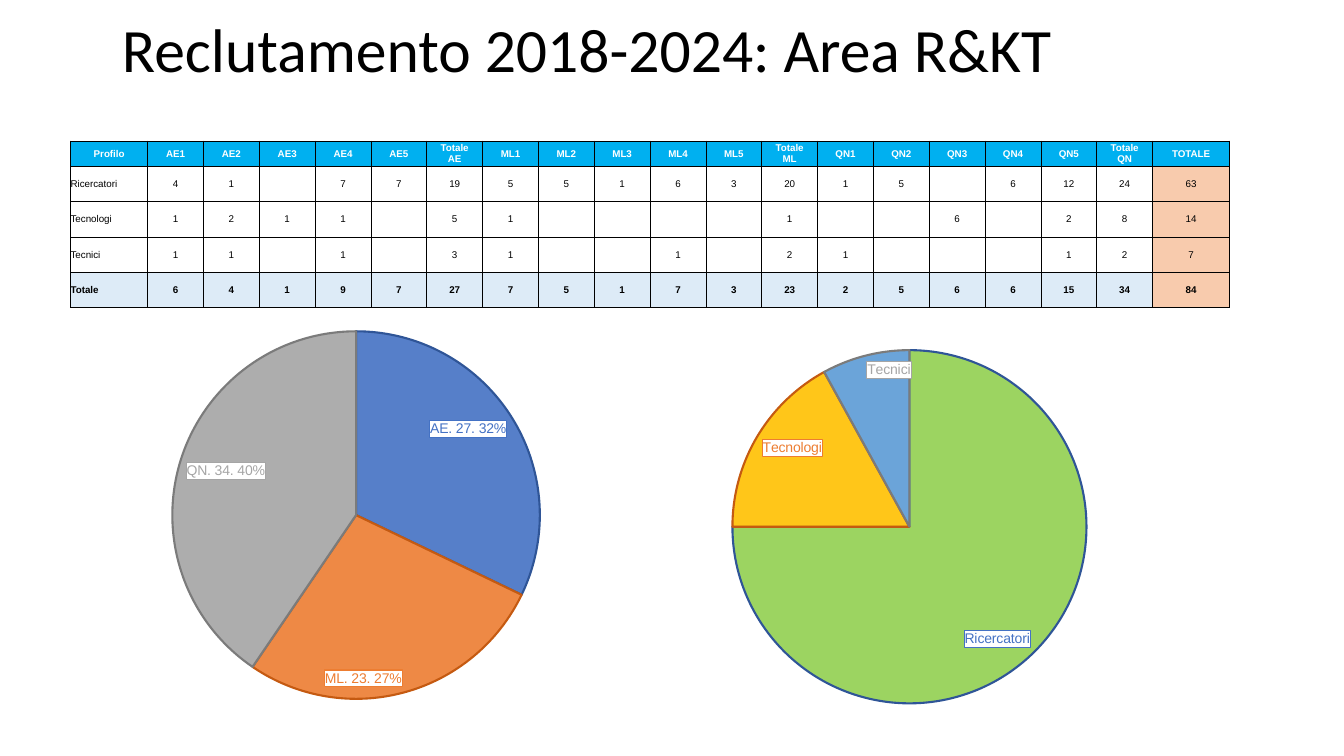
from lxml.etree import SubElement
from pptx import Presentation
from pptx.chart.data import CategoryChartData
from pptx.dml.color import RGBColor
from pptx.enum.chart import XL_CHART_TYPE, XL_LABEL_POSITION
from pptx.enum.text import MSO_ANCHOR, PP_ALIGN
from pptx.oxml import parse_xml
from pptx.oxml.ns import nsdecls, qn
from pptx.util import Cm, Pt

HUES = {
    "black": "000000", "white": "FFFFFF", "head": "00B0F0",
    "sum": "DDEBF7", "total": "F8CBAD",
    "blue": "4472C4", "orange": "ED7D31", "gray": "A5A5A5",
    "navy": "2F5597", "rust": "C55A11", "slate": "7B7B7B",
    "green": "92D050", "gold": "FFC000", "sky": "5B9BD5",
}
INKS = ["blue", "orange", "gray"]
EDGES = ["navy", "rust", "slate"]

GROUPS = ["AE", "ML", "QN"]
HEADS = ["Profilo"]
for group in GROUPS:
    HEADS += [f"{group}{n}" for n in range(1, 6)] + [f"Totale\v{group}"]
HEADS.append("TOTALE")

ROWS = [HEADS] + [line.split(",") for line in (
    "Ricercatori,4,1,,7,7,19,5,5,1,6,3,20,1,5,,6,12,24,63",
    "Tecnologi,1,2,1,1,,5,1,,,,,1,,,6,,2,8,14",
    "Tecnici,1,1,,1,,3,1,,,1,,2,1,,,,1,2,7",
    "Totale,6,4,1,9,7,27,7,5,1,7,3,23,2,5,6,6,15,34,84",
)]


def tint(name):
    return RGBColor.from_string(HUES[name])


def apply(item, form):
    for key, value in form.items():
        setattr(item, key, value)


def style(font, size, name, hue, bold=False):
    apply(font, {"size": Pt(size), "name": name, "bold": bold})
    font.color.rgb = tint(hue)


def add_title(slide, box, text):
    title = slide.shapes.title
    apply(title, dict(zip(("left", "top", "width", "height"), box)))
    frame = title.text_frame
    apply(frame, {"text": text, "word_wrap": True,
                  "vertical_anchor": MSO_ANCHOR.MIDDLE})
    line = frame.paragraphs[0]
    apply(line, {"alignment": PP_ALIGN.LEFT, "line_spacing": 0.9})
    style(line.runs[0].font, 44, "Calibri", "black")


def add_edges(cell):
    props = cell._tc.get_or_add_tcPr()
    for spot, side in enumerate("LRTB"):
        props.insert(spot, parse_xml(
            f'<a:ln{side} {nsdecls("a")} w="6350"><a:solidFill>'
            f'<a:srgbClr val="{HUES["black"]}"/></a:solidFill></a:ln{side}>'))


def fill_cell(cell, text, row, col):
    top, foot = row == 0, row == len(ROWS) - 1
    last = col == len(HEADS) - 1
    hue = ("head" if top else "total" if last
           else "sum" if foot else "white")
    apply(cell, {"text": text, "vertical_anchor": MSO_ANCHOR.MIDDLE,
                 "margin_left": 0, "margin_right": 0,
                 "margin_top": 0, "margin_bottom": 0})
    cell.fill.solid()
    cell.fill.fore_color.rgb = tint(hue)
    line = cell.text_frame.paragraphs[0]
    line.alignment = PP_ALIGN.CENTER if top or col else PP_ALIGN.LEFT
    for run in line.runs:
        style(run.font, 7, "Arial", "white" if top else "black", top or foot)
    add_edges(cell)


def add_grid(slide, box):
    left, top, width, height = box
    count = len(HEADS)
    grid = slide.shapes.add_table(len(ROWS), count, *box).table
    apply(grid, {"first_row": False, "horz_banding": False})
    side, first = Cm(1.94), Cm(0.64)
    for n, col in enumerate(grid.columns):
        ends = n in (0, count - 1)
        col.width = side if ends else (width - 2 * side) // (count - 2)
    for n, row in enumerate(grid.rows):
        row.height = (height - first) // (len(ROWS) - 1) if n else first
    for r, row in enumerate(ROWS):
        for c, text in enumerate(row):
            fill_cell(grid.cell(r, c), text, r, c)


def set_plot(chart, plot):
    area = chart._chartSpace.chart.plotArea
    for old in area.findall(qn("c:layout")):
        area.remove(old)
    spots = "".join(f'<c:{key} val="{value}"/>'
                    for key, value in zip("xywh", plot))
    area.insert(0, parse_xml(
        f'<c:layout {nsdecls("c")}><c:manualLayout>'
        '<c:layoutTarget val="inner"/><c:xMode val="edge"/>'
        f'<c:yMode val="edge"/>{spots}</c:manualLayout></c:layout>'))


def set_label(point, ink, shows):
    label = point.data_label
    style(label.font, 10, "Arial", ink)
    label.position = XL_LABEL_POSITION.INSIDE_END
    node = label._get_or_add_dLbl()
    for key in ("Val", "CatName", "Percent"):
        node.find(qn(f"c:show{key}")).set("val", str(int(key in shows)))
    node.find(qn("c:txPr")).addprevious(parse_xml(
        f'<c:spPr {nsdecls("c", "a")}><a:solidFill>'
        f'<a:srgbClr val="{HUES["white"]}"/></a:solidFill>'
        f'<a:ln w="9525"><a:solidFill><a:srgbClr val="{HUES[ink]}"/>'
        '</a:solidFill></a:ln></c:spPr>'))
    SubElement(node, qn("c:separator")).text = ". "


def add_pie(slide, box, plot, cats, values, fills, shows):
    data = CategoryChartData()
    data.categories = cats
    data.add_series("Series 1", values)
    chart = slide.shapes.add_chart(XL_CHART_TYPE.PIE, *box, data).chart
    apply(chart, {"has_legend": False, "has_title": False})
    style(chart.font, 10, "Arial", "black")
    chart.plots[0].vary_by_categories = True
    set_plot(chart, plot)
    series = chart.plots[0].series[0]
    for n, (fill, edge, ink) in enumerate(zip(fills, EDGES, INKS)):
        point = series.points[n]
        form = point.format
        form.fill.solid()
        form.fill.fore_color.rgb = tint(fill)
        form.line.color.rgb = tint(edge)
        form.line.width = Pt(1.5)
        set_label(point, ink, shows)
    for hue in series._element.xpath("c:dPt/c:spPr/a:solidFill/a:srgbClr"):
        SubElement(hue, qn("a:alpha")).set("val", "90000")


def main():
    deck = Presentation()
    apply(deck, {"slide_width": Cm(33.87), "slide_height": Cm(19.05)})
    slide = deck.slides.add_slide(deck.slide_layouts[5])
    add_title(slide, (Cm(2.82), Cm(-0.51), Cm(29.21), Cm(3.68)),
              "Reclutamento 2018-2024: Area R&KT")
    add_grid(slide, (Cm(1.78), Cm(3.55), Cm(29.21), Cm(4.2)))
    add_pie(slide, (Cm(0.91), Cm(8.05), Cm(16.13), Cm(9.96)),
            (0.21, 0.03, 0.58, 0.93), GROUPS, (27, 23, 34),
            INKS, ("Val", "CatName", "Percent"))
    add_pie(slide, (Cm(15.85), Cm(8.05), Cm(13.34), Cm(9.7)),
            (0.06, 0.08, 0.94, 0.92), [row[0] for row in ROWS[1:4]],
            (75, 17, 8), ("green", "gold", "sky"), ("CatName",))
    deck.save("out.pptx")


if __name__ == "__main__":
    main()
